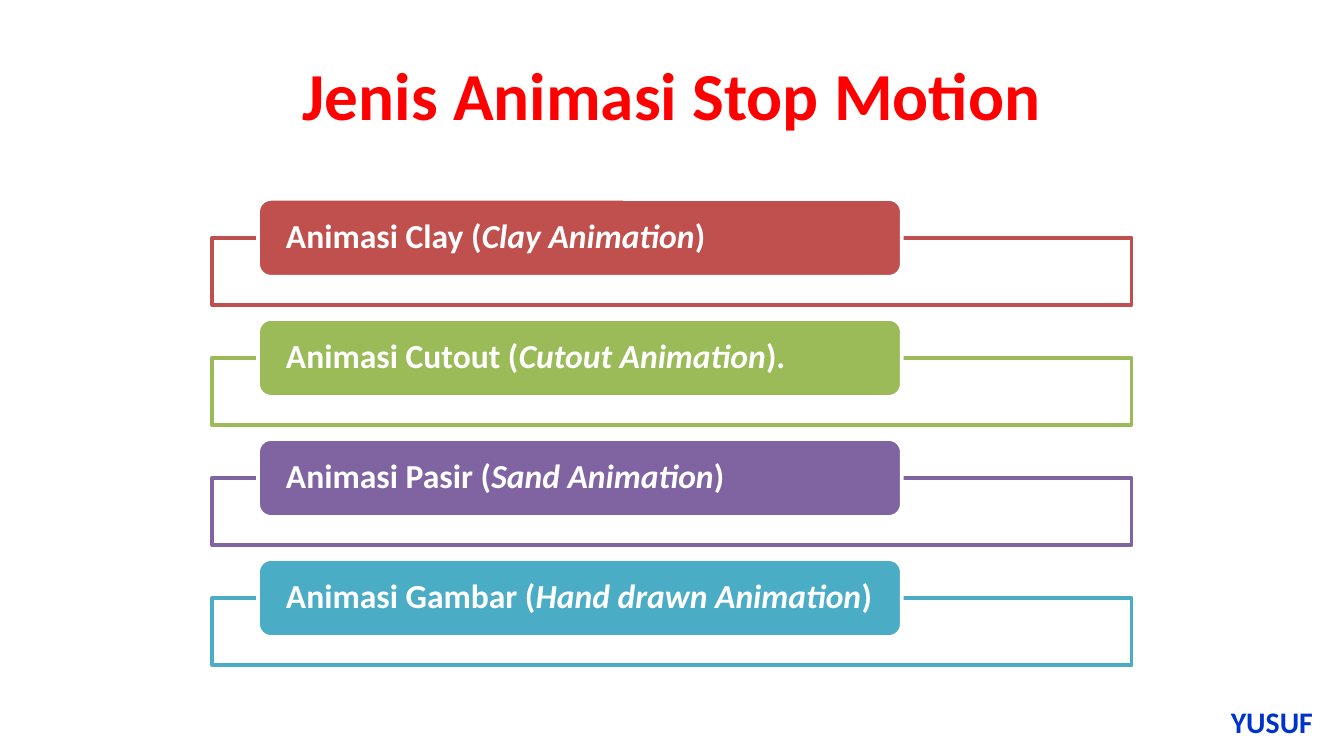
from lxml.etree import SubElement
from pptx import Presentation
from pptx.dml.color import RGBColor
from pptx.enum.shapes import MSO_SHAPE
from pptx.enum.text import MSO_ANCHOR, PP_ALIGN
from pptx.oxml.ns import qn
from pptx.util import Inches, Pt

FONT = "Calibri"
WHITE = "FFFFFF"

# Slide in 16:9 format, in inches
SLIDE_WIDTH = 10
SLIDE_HEIGHT = SLIDE_WIDTH * 9 / 16

# Grid of the list, in inches
FIRST_TOP, LAST_TOP = 1.48, 4.16
LABEL_LEFT, LABEL_WIDTH, LABEL_HEIGHT = 1.92, 4.79, 0.58
FRAME_LEFT, FRAME_WIDTH, FRAME_HEIGHT = 1.58, 6.84, 0.5

# Accent colour, Indonesian name, English name, closing mark
ANIMATION_TYPES = [
    ("C0504D", "Animasi Clay", "Clay Animation", ")"),
    ("9BBB59", "Animasi Cutout", "Cutout Animation", ")."),
    ("8064A2", "Animasi Pasir", "Sand Animation", ")"),
    ("4BACC6", "Animasi Gambar", "Hand drawn Animation", ")"),
]


def color(hex_value):
    return RGBColor.from_string(hex_value)


def style_font(paragraph, size, hex_value):
    font = paragraph.font
    font.name, font.size, font.bold = FONT, Pt(size), True
    font.color.rgb = color(hex_value)


def add_text(slide, box, text, size, hex_value, alignment):
    shape = slide.shapes.add_textbox(*map(Inches, box))
    frame = shape.text_frame
    frame.word_wrap = True
    frame.vertical_anchor = MSO_ANCHOR.MIDDLE
    paragraph = frame.paragraphs[0]
    paragraph.text = text
    paragraph.alignment = alignment
    style_font(paragraph, size, hex_value)


def add_box(slide, preset, box, fill, line):
    shape = slide.shapes.add_shape(preset, *map(Inches, box))
    shape.shadow.inherit = False
    shape.fill.solid()
    shape.fill.fore_color.rgb = color(fill)
    shape.line.color.rgb = color(line)
    shape.line.width = Pt(2)
    return shape


def set_opacity(shape, percent):
    fill_color = shape.element.spPr.find(qn("a:solidFill"))[0]
    SubElement(fill_color, qn("a:alpha"), val=str(percent * 1000))


def add_list_row(slide, top, accent, name, english_name, closing):
    # Outlined frame, starting halfway down the label
    frame_top = top + LABEL_HEIGHT / 2
    frame = add_box(slide, MSO_SHAPE.RECTANGLE,
                    (FRAME_LEFT, frame_top, FRAME_WIDTH, FRAME_HEIGHT), WHITE, accent)
    set_opacity(frame, 90)

    # Filled label with the English name in italics
    label = add_box(slide, MSO_SHAPE.ROUNDED_RECTANGLE,
                    (LABEL_LEFT, top, LABEL_WIDTH, LABEL_HEIGHT), accent, WHITE)
    text_frame = label.text_frame
    text_frame.word_wrap = True
    text_frame.vertical_anchor = MSO_ANCHOR.MIDDLE
    text_frame.margin_left, text_frame.margin_right = Inches(0.18), Inches(0.1)
    text_frame.margin_top = text_frame.margin_bottom = 0
    paragraph = text_frame.paragraphs[0]
    paragraph.alignment = PP_ALIGN.LEFT
    paragraph.line_spacing = 0.9
    style_font(paragraph, 18, WHITE)
    for text, italic in ((f"{name} (", False), (english_name, True), (closing, False)):
        run = paragraph.add_run()
        run.text = text
        run.font.italic = italic


def main():
    presentation = Presentation()
    presentation.slide_width = Inches(SLIDE_WIDTH)
    presentation.slide_height = Inches(SLIDE_HEIGHT)
    slide = presentation.slides.add_slide(presentation.slide_layouts[6])

    # Author mark and title
    add_text(slide, (9.06, 5.16, 0.86, 0.42), "YUSUF", 16, "0033CC", PP_ALIGN.LEFT)
    add_text(slide, (0.5, 0.23, 9, 0.94), "Jenis Animasi Stop Motion", 36, "FF0000",
             PP_ALIGN.CENTER)

    # List of animation types
    pitch = (LAST_TOP - FIRST_TOP) / (len(ANIMATION_TYPES) - 1)
    for row, animation_type in enumerate(ANIMATION_TYPES):
        add_list_row(slide, FIRST_TOP + row * pitch, *animation_type)

    presentation.save("out.pptx")


if __name__ == "__main__":
    main()
